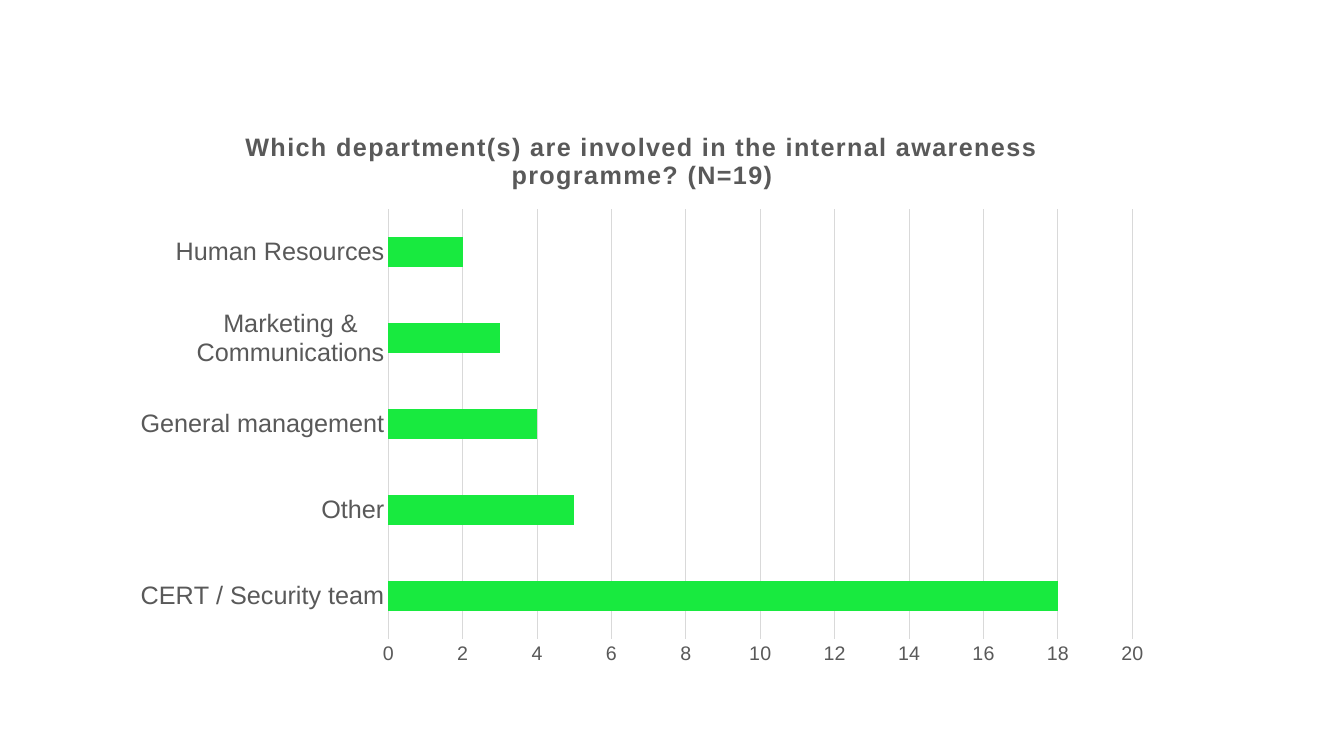
from dataclasses import dataclass

from pptx import Presentation
from pptx.chart.data import CategoryChartData
from pptx.dml.color import RGBColor
from pptx.enum.chart import XL_CHART_TYPE, XL_TICK_MARK
from pptx.util import Pt

EMU_PER_PX = 9525


@dataclass(frozen=True)
class Theme:
    font: str = "Arial"
    text: RGBColor = RGBColor(0x59, 0x59, 0x59)
    rule: RGBColor = RGBColor(0xD9, 0xD9, 0xD9)
    bar: RGBColor = RGBColor(0x18, 0xEA, 0x3F)
    title_size: int = 18
    department_size: int = 18
    count_size: int = 14
    rule_width: float = 0.75
    title_spacing: int = 100


THEME = Theme()
QUESTION = "Which department(s) are involved in the internal awareness programme? (N=19)"
ANSWERS = {
    "CERT / Security team": 18,
    "Other": 5,
    "General management": 4,
    "Marketing & Communications": 3,
    "Human Resources": 2,
}


def px(length):
    return length * EMU_PER_PX


def style_font(font, size, bold=False):
    font.name = THEME.font
    font.size = Pt(size)
    font.bold = bold
    font.color.rgb = THEME.text


def style_rule(line):
    line.color.rgb = THEME.rule
    line.width = Pt(THEME.rule_width)


def style_axis(axis, size):
    axis.major_tick_mark = XL_TICK_MARK.NONE
    axis.minor_tick_mark = XL_TICK_MARK.NONE
    style_font(axis.tick_labels.font, size)


def add_title(chart, question):
    chart.has_title = True
    chart.chart_title.include_in_layout = False
    paragraph = chart.chart_title.text_frame.paragraphs[0]
    paragraph.text = question
    for run in paragraph.runs:
        style_font(run.font, THEME.title_size, bold=True)
        run.font._element.set("spc", str(THEME.title_spacing))


def add_bar_chart(slide, question, answers, left, top, width, height):
    survey = CategoryChartData()
    survey.categories = list(answers)
    survey.add_series("Series 1", list(answers.values()))
    chart = slide.shapes.add_chart(
        XL_CHART_TYPE.BAR_CLUSTERED, px(left), px(top), px(width), px(height), survey
    ).chart
    chart.has_legend = False
    style_font(chart.font, THEME.count_size)
    add_title(chart, question)

    departments = chart.category_axis
    style_axis(departments, THEME.department_size)
    departments.has_major_gridlines = False
    style_rule(departments.format.line)

    counts = chart.value_axis
    style_axis(counts, THEME.count_size)
    counts.minimum_scale = 0
    counts.maximum_scale = 20
    counts.major_unit = 2
    counts.format.line.fill.background()
    counts.has_major_gridlines = True
    style_rule(counts.major_gridlines.format.line)

    bars = chart.plots[0]
    bars.gap_width = 182
    bars.vary_by_categories = False
    fill = bars.series[0].format.fill
    fill.solid()
    fill.fore_color.rgb = THEME.bar


def main():
    presentation = Presentation()
    presentation.slide_width = px(1280)
    presentation.slide_height = px(720)
    slide = presentation.slides.add_slide(presentation.slide_layouts[6])
    add_bar_chart(slide, QUESTION, ANSWERS, 114, 104, 995, 540)
    presentation.save("out.pptx")


if __name__ == "__main__":
    main()
